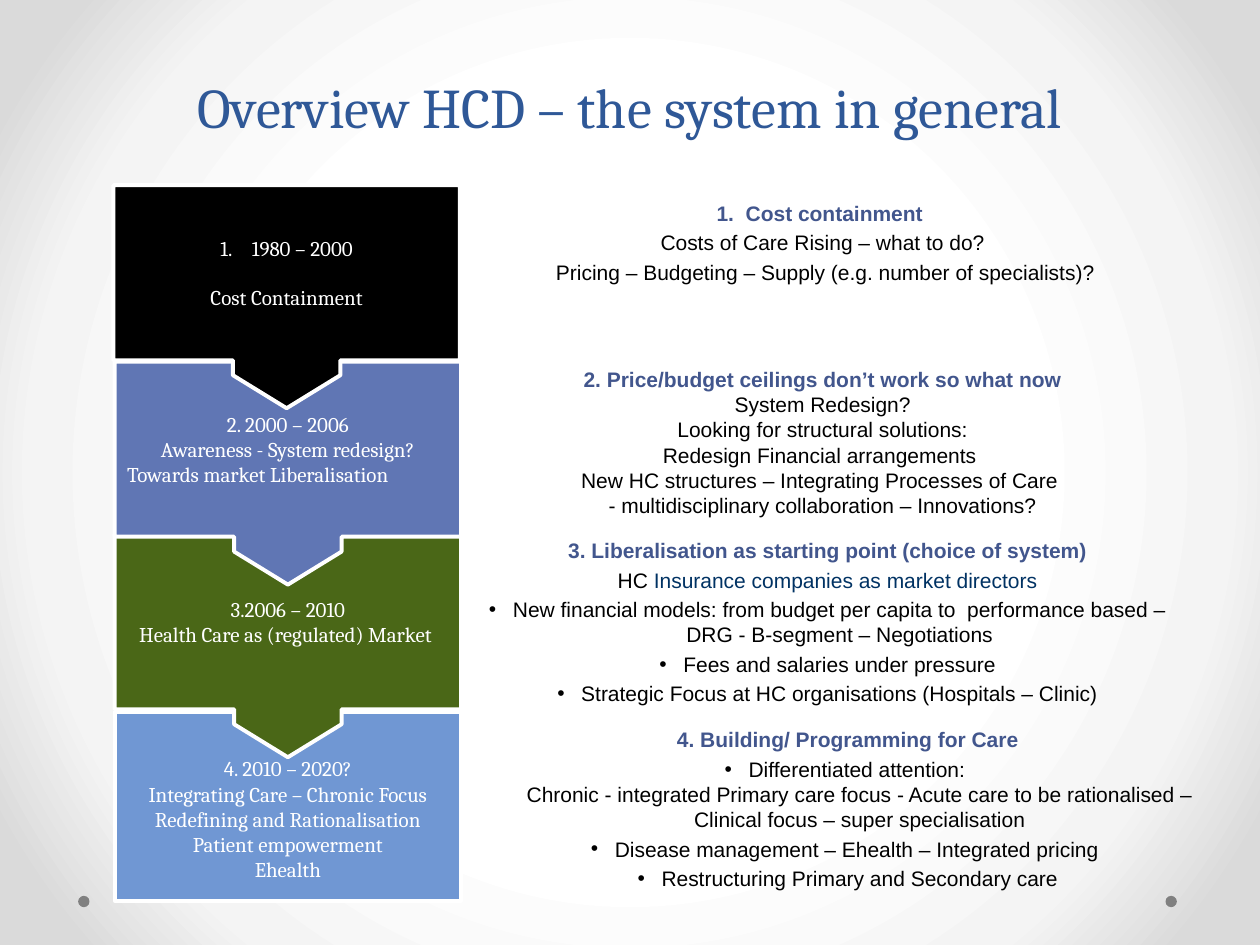
from dataclasses import dataclass

from lxml.etree import SubElement
from pptx import Presentation
from pptx.dml.color import RGBColor
from pptx.enum.shapes import MSO_SHAPE
from pptx.enum.text import MSO_ANCHOR, PP_ALIGN
from pptx.oxml.ns import qn
from pptx.util import Inches, Pt

WHITE, BLACK, NAVY = "FFFFFF", "000000", "003263"
HEADING, TITLE = "42568D", "2F5897"
CALLOUT_ADJUSTMENTS = (0.482, 0.241, 0.148, 0.785)


@dataclass
class Line:
    runs: list
    indent: float = 0
    before: float = 0
    bullet: str = ""
    align: PP_ALIGN = PP_ALIGN.CENTER


def heading(text):
    return Line([(text, HEADING, True)], 0.19, 2.4)


def spaced(*runs):
    return Line(list(runs), 0.19, 2.4)


def bullet(text):
    return Line([(text, BLACK, False)], 0.19, 2.4, "•")


def plain(text):
    return Line([(text, BLACK, False)])


def label(text, **options):
    return Line([(text, WHITE, False)], **options)


STAGES = [
    (0.90, 1.47, BLACK, [
        label("1980 – 2000", indent=0.25, bullet="1."),
        label("Cost Containment", before=14),
    ]),
    (0.91, 2.87, "6076B4", [
        label("2. 2000 – 2006\nAwareness - System redesign?"),
        label("Towards market Liberalisation", align=PP_ALIGN.LEFT),
    ]),
    (0.91, 4.24, "4A6717", [
        label("3.2006 – 2010"),
        label("Health Care as (regulated) Market "),
    ]),
]
LAST_STAGE = [
    label("4. 2010 – 2020?"),
    label("Integrating Care – Chronic Focus"),
    label("Redefining and Rationalisation"),
    label("Patient empowerment"),
    label("Ehealth"),
]
NOTES = [
    ((3.65, 1.54, 5.76, 1.26), [
        heading("1.  Cost containment "),
        spaced(("Costs of Care Rising – what to do?", BLACK, False)),
        spaced((" Pricing – Budgeting – Supply (e.g. number of specialists)?", BLACK, False)),
    ]),
    ((3.65, 2.86, 5.76, 1.52), [
        heading("2. Price/budget ceilings don’t work so what now"),
        plain("System Redesign?"),
        plain("Looking for structural solutions:"),
        plain("Redesign Financial arrangements "),
        plain("New HC structures – Integrating Processes of Care \n"
              "- multidisciplinary collaboration – Innovations?"),
    ]),
    ((3.65, 4.22, 5.84, 1.58), [
        heading("3. Liberalisation as starting point (choice of system)"),
        spaced(("HC ", BLACK, False), ("Insurance companies as market directors", NAVY, False)),
        bullet("New financial models: from budget per capita to  performance based – "
               "DRG - B-segment – Negotiations"),
        bullet("Fees and salaries under pressure"),
        bullet("Strategic Focus at HC organisations (Hospitals – Clinic)"),
    ]),
    ((3.66, 5.72, 6.14, 1.5), [
        heading("4. Building/ Programming for Care"),
        bullet("Differentiated attention: \nChronic - integrated Primary care focus - "
               "Acute care to be rationalised – Clinical focus – super specialisation"),
        bullet("Disease management – Ehealth – Integrated pricing "),
        bullet("Restructuring Primary and Secondary care"),
    ]),
]


def color(value):
    return RGBColor.from_string(value)


def add_run(paragraph, text, font, size, fill, bold=False):
    for index, part in enumerate(text.split("\n")):
        if index:
            paragraph.add_line_break()
        run = paragraph.add_run()
        run.text = part
        run.font.name = font
        run.font.size = Pt(size)
        run.font.bold = bold
        run.font.color.rgb = color(fill)


def format_indent(paragraph, line):
    properties = paragraph._p.get_or_add_pPr()
    properties.set("marL", str(Inches(line.indent)))
    properties.set("indent", str(-Inches(line.indent)))
    if line.bullet == "1.":
        SubElement(properties, qn("a:buAutoNum"), type="arabicPeriod")
    elif line.bullet:
        SubElement(properties, qn("a:buFont"), typeface="Arial")
        SubElement(properties, qn("a:buChar"), char=line.bullet)


def write_lines(text_frame, lines, font):
    text_frame.word_wrap = True
    for index, line in enumerate(lines):
        paragraph = text_frame.add_paragraph() if index else text_frame.paragraphs[0]
        paragraph.alignment = line.align
        paragraph.space_before = Pt(line.before)
        format_indent(paragraph, line)
        for text, fill, bold in line.runs:
            add_run(paragraph, text, font, 12, fill, bold)


def add_filled_shape(shapes, kind, box, fill):
    shape = shapes.add_shape(kind, *map(Inches, box))
    shape.shadow.inherit = False
    shape.fill.solid()
    shape.fill.fore_color.rgb = color(fill)
    shape.line.fill.background()
    return shape


def add_stage(shapes, kind, box, fill, lines):
    shape = add_filled_shape(shapes, kind, box, fill)
    shape.line.color.rgb = color(WHITE)
    shape.line.width = Pt(2.25)
    shape.text_frame.vertical_anchor = MSO_ANCHOR.MIDDLE
    write_lines(shape.text_frame, lines, "Cambria")
    return shape


def add_stages(slide):
    shapes = slide.shapes.add_group_shape().shapes
    last = add_stage(shapes, MSO_SHAPE.RECTANGLE, (0.91, 5.65, 2.75, 1.5), "7097D3", LAST_STAGE)
    last.text_frame.margin_top = Inches(0.25)
    for left, top, fill, lines in reversed(STAGES):
        callout = add_stage(shapes, MSO_SHAPE.DOWN_ARROW_CALLOUT,
                            (left, top, 2.75, 1.77), fill, lines)
        for index, value in enumerate(CALLOUT_ADJUSTMENTS):
            callout.adjustments[index] = value


def set_background(slide):
    slide.background.fill.gradient()
    gradient = slide.element.find(".//" + qn("a:gradFill"))
    for child in list(gradient):
        gradient.remove(child)
    stops = SubElement(gradient, qn("a:gsLst"))
    for position, fill in ((50, WHITE), (76, "F4F4F4"), (92, "DADADA")):
        stop = SubElement(stops, qn("a:gs"), pos=str(position * 1000))
        SubElement(stop, qn("a:srgbClr"), val=fill)
    shade = SubElement(gradient, qn("a:path"), path="circle")
    SubElement(shade, qn("a:fillToRect"), l="50000", t="50000", r="50000", b="50000")


def set_title(slide, text):
    title = slide.shapes.title
    title.left, title.top, title.width, title.height = map(Inches, (0.5, 0.26, 9, 0.9))
    title.text_frame.vertical_anchor = MSO_ANCHOR.BOTTOM
    paragraph = title.text_frame.paragraphs[0]
    paragraph.alignment = PP_ALIGN.CENTER
    paragraph.line_spacing = Pt(58)
    add_run(paragraph, text, "Cambria", 32, TITLE)


def main():
    presentation = Presentation()
    presentation.slide_width, presentation.slide_height = Inches(10), Inches(7.5)
    slide = presentation.slides.add_slide(presentation.slide_layouts[5])
    set_background(slide)
    set_title(slide, "Overview HCD – the system in general")
    for left in (9.25, 0.62):
        add_filled_shape(slide.shapes, MSO_SHAPE.OVAL, (left, 7.11, 0.09, 0.09), "808080")
    add_stages(slide)
    for box, lines in NOTES:
        text_box = slide.shapes.add_textbox(*map(Inches, box))
        write_lines(text_box.text_frame, lines, "Arial")
    presentation.save("out.pptx")


if __name__ == "__main__":
    main()
